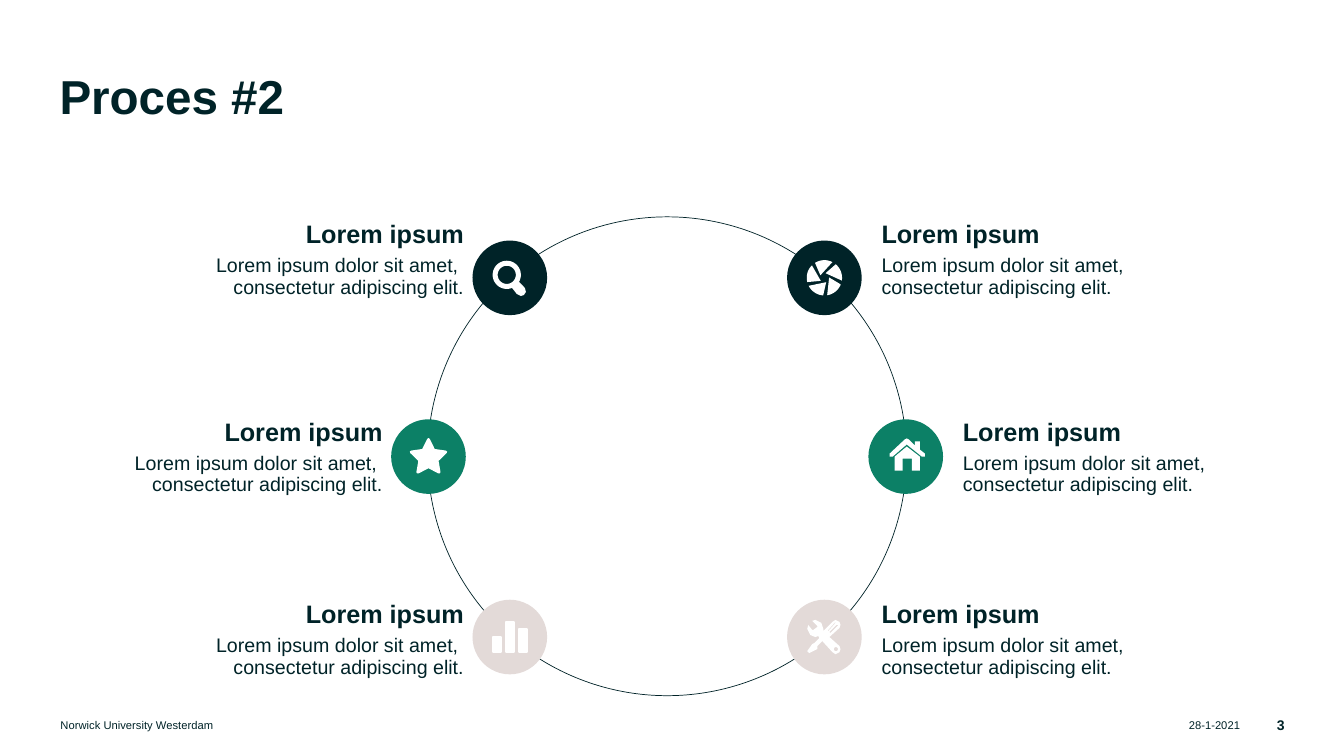
from math import cos, pi, radians, sin

from pptx import Presentation
from pptx.dml.color import RGBColor
from pptx.enum.shapes import MSO_SHAPE
from pptx.enum.text import MSO_ANCHOR, MSO_AUTO_SIZE, PP_ALIGN
from pptx.util import Inches, Pt

INK = RGBColor(0x00, 0x23, 0x28)
GREEN = RGBColor(0x0C, 0x80, 0x66)
SAND = RGBColor(0xE3, 0xDA, 0xD8)
WHITE = RGBColor(0xFF, 0xFF, 0xFF)

# The grid has square cells, 22.5 rows to the slide's height
ROWS = 22.5
AXIS, MIDDLE = 19.85, 13.58
RING_SIZE, NODE_SIZE = 14.25, 2.22
LEFT_MARGIN, RIGHT_MARGIN = 1.8, 38.22
LABEL_HEIGHT = 2.34
FOOTER_ROW, FOOTER_HEIGHT = 21.36, 0.42
ICON_UNIT = 0.03

HEADING = {"size": Pt(18), "bold": True}
BODY = {"size": Pt(14), "bold": False}
SMALL = {"size": Pt(8), "bold": False}
PAGE = {"size": Pt(10), "bold": True}
TITLE = {"size": Pt(34), "bold": True}
LABEL_SPACING = {"line_spacing": 0.9, "space_before": Pt(5)}
LABEL_TEXT = [
    (["Lorem ipsum"], HEADING),
    (["Lorem ipsum dolor sit amet, ", "consectetur adipiscing elit."], BODY),
]


def arc(x, y, radius, start, end, steps=40):
    """Points along a circular arc, angles in degrees, clockwise."""
    angles = [radians(start + (end - start) * i / steps) for i in range(steps + 1)]
    return [(x + radius * cos(a), y + radius * sin(a)) for a in angles]


def bar(left, top, width, bottom):
    return [(left, top), (left + width, top), (left + width, bottom), (left, bottom)]


# Icon outlines, measured from the centre of their node
MAGNIFIER = [
    arc(-3, -3, 14, 68, 390) + [(15, 10), (16, 14), (14, 17), (11, 18), (7, 16)],
    arc(-3, -3, 9, 0, 360),
]
APERTURE = [
    arc(0, 0, 17.5, turn - 122, turn - 63) + arc(0, 0, 4.7, turn - 148, turn - 148, 1)
    for turn in range(0, 360, 72)
]
STAR = [[
    (radius * sin(i * pi / 5), 1 - radius * cos(i * pi / 5))
    for i, radius in enumerate([18, 9] * 5)
]]
HOUSE = [
    [(1, -10), (14, 0), (14, 14), (6, 14), (6, 2), (-3, 2), (-3, 14), (-11, 14), (-11, 0)],
    [(1, -18), (3, -17), (9, -11), (9, -15), (14, -15), (14, -7), (19, -3), (19, 0),
     (16, 0), (1, -12), (-13, 0), (-16, 0), (-16, -3), (-1, -17)],
]
BARS = [bar(x, top, 8, 15) for x, top in [(-17, 0), (-4, -15), (9, -8)]]
TOOLS = [
    [(5, 0), (15, -9), (16, -12), (15, -15), (11, -17), (8, -15), (-1, -6), (-1, -8),
     (-3, -14), (-9, -17), (-12, -16), (-7, -11), (-7, -10), (-11, -7), (-12, -7),
     (-16, -12), (-17, -8), (-14, -2), (-9, 0), (-6, -1), (-5, 1), (-10, 6), (-12, 7),
     (-17, 14), (-15, 16), (-7, 12), (-7, 9), (-2, 4), (8, 15), (11, 17), (15, 15),
     (16, 12), (15, 9)],
    [(3, -6), (10, -14), (11, -15), (11, -14), (4, -6)],
    [(5, -5), (12, -12), (14, -12), (13, -11), (6, -4)],
    arc(11.5, 12, 2, 0, 360),
]

# Per row: node centre, distance from the axis, label top, colour,
# then the left and right icons, each with the width of its rounding line
NODE_ROWS = [
    (8.27, 4.68, 6.54, INK, (MAGNIFIER, 0), (APERTURE, 0)),
    (13.59, 7.1, 12.42, GREEN, (STAR, 2), (HOUSE, 0)),
    (18.96, 4.68, 17.85, SAND, (BARS, 1.5), (TOOLS, 0)),
]


class ProcessSlide:
    def __init__(self, presentation):
        self.slide = presentation.slides.add_slide(presentation.slide_layouts[5])
        self.cell = presentation.slide_height / ROWS

    def box(self, *lengths):
        return [round(length * self.cell) for length in lengths]

    def set_text(self, shape, paragraphs, align, anchor, spacing):
        frame = shape.text_frame
        frame_format = {
            "word_wrap": True, "auto_size": MSO_AUTO_SIZE.NONE, "vertical_anchor": anchor,
            "margin_left": 0, "margin_right": 0, "margin_top": 0, "margin_bottom": 0,
        }
        for name, value in frame_format.items():
            setattr(frame, name, value)
        for index, (lines, style) in enumerate(paragraphs):
            paragraph = frame.add_paragraph() if index else frame.paragraphs[0]
            for name, value in {"alignment": align, **spacing}.items():
                setattr(paragraph, name, value)
            for number, line in enumerate(lines):
                if number:
                    paragraph.add_line_break()
                run = paragraph.add_run()
                run.text = line
                run.font.color.rgb = INK
                for name, value in {"name": "Arial", **style}.items():
                    setattr(run.font, name, value)

    def title(self, text, *place):
        shape = self.slide.shapes.title
        shape.left, shape.top, shape.width, shape.height = self.box(*place)
        self.set_text(shape, [([text], TITLE)], PP_ALIGN.LEFT, MSO_ANCHOR.TOP,
                      {"line_spacing": Pt(32)})

    def text(self, paragraphs, *place, align=PP_ALIGN.LEFT, anchor=MSO_ANCHOR.MIDDLE,
             spacing=None):
        shape = self.slide.shapes.add_textbox(*self.box(*place))
        self.set_text(shape, paragraphs, align, anchor, spacing or {})

    def paint(self, shape, fill, line, line_width):
        shape.shadow.inherit = False
        if fill is None:
            shape.fill.background()
        else:
            shape.fill.solid()
            shape.fill.fore_color.rgb = fill
        if line_width:
            shape.line.color.rgb = line
            shape.line.width = Pt(line_width)
        else:
            shape.line.fill.background()

    def circle(self, x, y, size, fill=None, line=None, line_width=0):
        place = self.box(x - size / 2, y - size / 2, size, size)
        self.paint(self.slide.shapes.add_shape(MSO_SHAPE.OVAL, *place), fill, line, line_width)

    def icon(self, x, y, outlines, line_width):
        contours = [
            [self.box(x + dx * ICON_UNIT, y + dy * ICON_UNIT) for dx, dy in outline]
            for outline in outlines
        ]
        builder = self.slide.shapes.build_freeform(*contours[0][0])
        for index, contour in enumerate(contours):
            if index:
                builder.move_to(*contour[0])
            builder.add_line_segments(contour[1:], close=True)
        self.paint(builder.convert_to_shape(), WHITE, WHITE, line_width)


def main():
    presentation = Presentation()
    presentation.slide_width, presentation.slide_height = Inches(13.33), Inches(7.5)
    page = ProcessSlide(presentation)

    # Title and footer
    page.title("Proces #2", 1.77, 2.37, 36.45, 2.34)
    for text, style, left, width, align in [
        ("28-1-2021", SMALL, 34.62, 2.28, PP_ALIGN.RIGHT),
        ("Norwick University Westerdam", SMALL, LEFT_MARGIN, 32.37, PP_ALIGN.LEFT),
        ("3", PAGE, 37.35, 0.87, PP_ALIGN.RIGHT),
    ]:
        page.text([([text], style)], left, FOOTER_ROW, width, FOOTER_HEIGHT, align=align)

    # Ring
    page.circle(AXIS, MIDDLE, RING_SIZE, line=INK, line_width=0.5)

    # Nodes with icons and labels on both sides of the axis
    for y, distance, label_top, colour, left_icon, right_icon in NODE_ROWS:
        left_x, right_x = AXIS - distance, AXIS + distance
        label_end, label_start = left_x - 1.36, right_x + 1.7
        for x, icon, start, end, align in [
            (left_x, left_icon, LEFT_MARGIN, label_end, PP_ALIGN.RIGHT),
            (right_x, right_icon, label_start, RIGHT_MARGIN, PP_ALIGN.LEFT),
        ]:
            page.circle(x, y, NODE_SIZE, fill=colour)
            page.icon(x, y, *icon)
            page.text(LABEL_TEXT, start, label_top, end - start, LABEL_HEIGHT,
                      align=align, anchor=MSO_ANCHOR.BOTTOM, spacing=LABEL_SPACING)

    presentation.save("out.pptx")


if __name__ == "__main__":
    main()
